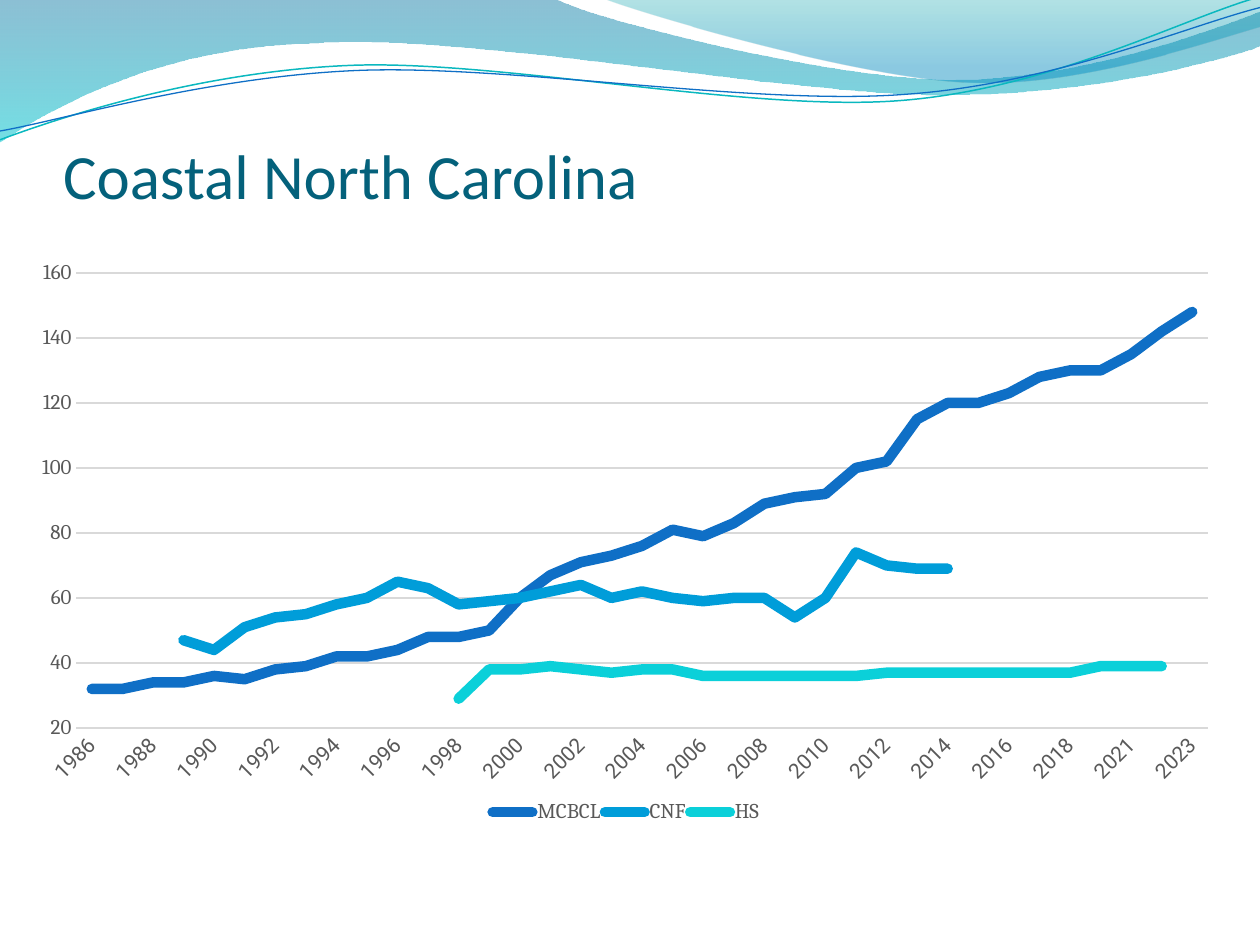
from lxml import etree
from pptx import Presentation
from pptx.chart.data import CategoryChartData
from pptx.dml.color import RGBColor as RGB
from pptx.enum.chart import XL_CHART_TYPE, XL_LEGEND_POSITION as LegendPos, XL_MARKER_STYLE as Marker
from pptx.enum.chart import XL_TICK_MARK as TickMark
from pptx.enum.text import MSO_ANCHOR, MSO_AUTO_SIZE, PP_ALIGN
from pptx.oxml import parse_xml
from pptx.oxml.ns import nsdecls, qn
from pptx.util import Inches, Pt

COLORS = {
    "title": "04617B", "text": "595959", "grid": "D9D9D9",
    "MCBCL": "0F6FC6", "CNF": "009DD9", "HS": "0BD0D9",
    "teal_line": "0AB8BF", "blue_line": "0F6FC6",
}


def add_wave(start, segments, closed):
    """Draw lines (2 numbers) and cubic curves (6 numbers) as one outline."""
    builder = slide.shapes.build_freeform(Inches(start[0]), Inches(start[1]))
    builder.add_line_segments([(Inches(seg[-2]), Inches(seg[-1])) for seg in segments], close=closed)
    wave = builder.convert_to_shape()
    wave.shadow.inherit = False
    for seg, side in zip(segments, list(wave._element.iter(qn("a:lnTo")))):
        if len(seg) == 6:
            side.tag = qn("a:cubicBezTo")
            for i in (0, 1):
                control = etree.Element(qn("a:pt"))
                control.set("x", str(Inches(seg[2 * i]) - wave.left))
                control.set("y", str(Inches(seg[2 * i + 1]) - wave.top))
                side.insert(i, control)
    return wave


def style_font(font, size, color, name):
    for key, value in {"size": Pt(size), "name": name, "bold": False}.items():
        setattr(font, key, value)
    font.color.rgb = RGB.from_string(COLORS[color])


prs = Presentation()
prs.slide_width, prs.slide_height = Inches(10), Inches(7.5)
slide = prs.slides.add_slide(prs.slide_layouts[5])

# Filled waves: stops are position, colour, opacity in percent
filled_waves = [
    ((0, 0),
     [(4.4, -0.01), (4.76, 0.17, 6.64, 0.63, 7.58, 0.63), (8.53, 0.63, 9.58, 0.26, 10, 0.09),
      (10.01, 0.36), (9.83, 0.44, 8.7, 0.76, 7.46, 0.75), (6.22, 0.75, 3.82, 0.28, 2.57, 0.34),
      (1.29, 0.36, 0.46, 0.83, -0.01, 1.13)],
     [(0, "0074A1", 45), (1, "00C6CF", 55)]),
    ((4.79, -0.01),
     [(5.09, 0.11, 6.82, 0.62, 7.69, 0.65), (8.56, 0.69, 9.61, 0.32, 10, 0.21), (10, 0)],
     [(0, "00A1A9", 30), (0.8, "008BBF", 45)]),
]
for start, segments, stops in filled_waves:
    wave = add_wave(start, segments, True)
    wave.line.fill.background()
    wave.fill.gradient()
    wave.fill.gradient_angle = 270
    for stop, (position, color, _) in zip(wave.fill.gradient_stops, stops):
        stop.position = position
        stop.color.rgb = RGB.from_string(color)
    gradient = wave._element.spPr.find(qn("a:gradFill"))
    for clr, (_, _, opacity) in zip(gradient.iter(qn("a:srgbClr")), stops):
        etree.SubElement(clr, qn("a:alpha")).set("val", str(opacity * 1000))

# Thin wave lines
line_waves = [
    ((0, 1.11),
     [(0.48, 0.93, 1.58, 0.57, 2.77, 0.52), (3.95, 0.47, 5.93, 0.89, 7.13, 0.8),
      (8.33, 0.71, 9.38, 0.15, 9.98, -0.02)], "teal_line", 0.85),
    ((0, 1.04),
     [(0.47, 0.96, 1.64, 0.61, 2.83, 0.56), (4.03, 0.51, 5.97, 0.84, 7.17, 0.75),
      (8.36, 0.67, 9.41, 0.21, 10, 0.06)], "blue_line", 0.75),
]
for start, segments, color, width in line_waves:
    wave = add_wave(start, segments, False)
    wave.fill.background()
    wave.line.color.rgb = RGB.from_string(COLORS[color])
    wave.line.width = Pt(width)

# Title, in front of the waves
title = slide.shapes.title
slide.shapes._spTree.append(title._element)
title_box = {"left": 0.5, "top": 0.83, "width": 9.08, "height": 0.85}
for key, value in title_box.items():
    setattr(title, key, Inches(value))
title.text = "Coastal North Carolina"
frame_format = {"margin_left": 0, "margin_right": 0, "margin_top": Inches(0.05), "margin_bottom": 0,
                "vertical_anchor": MSO_ANCHOR.BOTTOM, "auto_size": MSO_AUTO_SIZE.NONE, "word_wrap": True}
for key, value in frame_format.items():
    setattr(title.text_frame, key, value)
heading = title.text_frame.paragraphs[0]
heading.alignment = PP_ALIGN.LEFT
style_font(heading.runs[0].font, 36, "title", "Calibri")

# Chart data: 2020 is not reported
counts = CategoryChartData()
counts.categories = [str(year) for year in range(1986, 2024) if year != 2020]
sites = {
    "MCBCL": [32, 32, 34, 34, 36, 35, 38, 39, 42, 42, 44, 48, 48, 50, 60, 67, 71, 73, 76, 81, 79, 83,
              89, 91, 92, 100, 102, 115, 120, 120, 123, 128, 130, 130, 135, 142, 148],
    "CNF": [0, 0, None, 47, 44, 51, 54, 55, 58, 60, 65, 63, 58, 59, 60, 62, 64, 60, 62, 60, 59, 60,
            60, 54, 60, 74, 70, 69, 69] + [None] * 8,
    "HS": [0] * 3 + [None] * 9 + [29, 38, 38, 39, 38, 37, 38, 38] + [36] * 6 + [37] * 7
          + [39] * 3 + [None],
}
for site, values in sites.items():
    counts.add_series(site, values)
chart = slide.shapes.add_chart(XL_CHART_TYPE.LINE, Inches(0.17), Inches(1.92),
                               Inches(9.5), Inches(4.74), counts).chart
chart.has_title = False
chart.font.name, chart.font.size = "Cambria", Pt(10)

# Site lines
for series in chart.plots[0].series:
    series.smooth = False
    series.marker.style = Marker.NONE
    series.format.line.color.rgb = RGB.from_string(COLORS[series.name])
    series.format.line.width = Pt(6)
    series.format.line._ln.set("cap", "rnd")
chart.plots[0].vary_by_categories = False

# Axes
years, scale = chart.category_axis, chart.value_axis
for axis, font_name in ((years, "Roboto"), (scale, "Cambria")):
    axis.major_tick_mark = axis.minor_tick_mark = TickMark.NONE
    style_font(axis.tick_labels.font, 12, "text", font_name)
    # Automatic label rotation
    axis._element.find(qn("c:txPr")).find(qn("a:bodyPr")).set("rot", "-60000000")
for key, value in {"minimum_scale": 20, "has_major_gridlines": True}.items():
    setattr(scale, key, value)
scale.format.line.fill.background()
for line in (years.format.line, scale.major_gridlines.format.line):
    line.color.rgb = RGB.from_string(COLORS["grid"])
    line.width = Pt(0.75)

# Legend
chart.has_legend = True
chart.legend.position = LegendPos.BOTTOM
chart.legend.include_in_layout = False
style_font(chart.legend.font, 12, "text", "Cambria")

# Plot area and legend positions as fractions of the chart
plot_area = chart._chartSpace.chart.plotArea
legend = chart.legend._element
for part, index, target, (x, y, w, h) in (
        (plot_area, 0, '<c:layoutTarget val="inner"/>', (0.046, 0.052, 0.945, 0.762)),
        (legend, 1, "", (0.39, 0.93, 0.23, 0.05))):
    for old_layout in part.findall(qn("c:layout")):
        part.remove(old_layout)
    part.insert(index, parse_xml(
        f'<c:layout {nsdecls("c")}><c:manualLayout>{target}'
        f'<c:xMode val="edge"/><c:yMode val="edge"/><c:x val="{x}"/><c:y val="{y}"/>'
        f'<c:w val="{w}"/><c:h val="{h}"/></c:manualLayout></c:layout>'))

prs.save("out.pptx")
